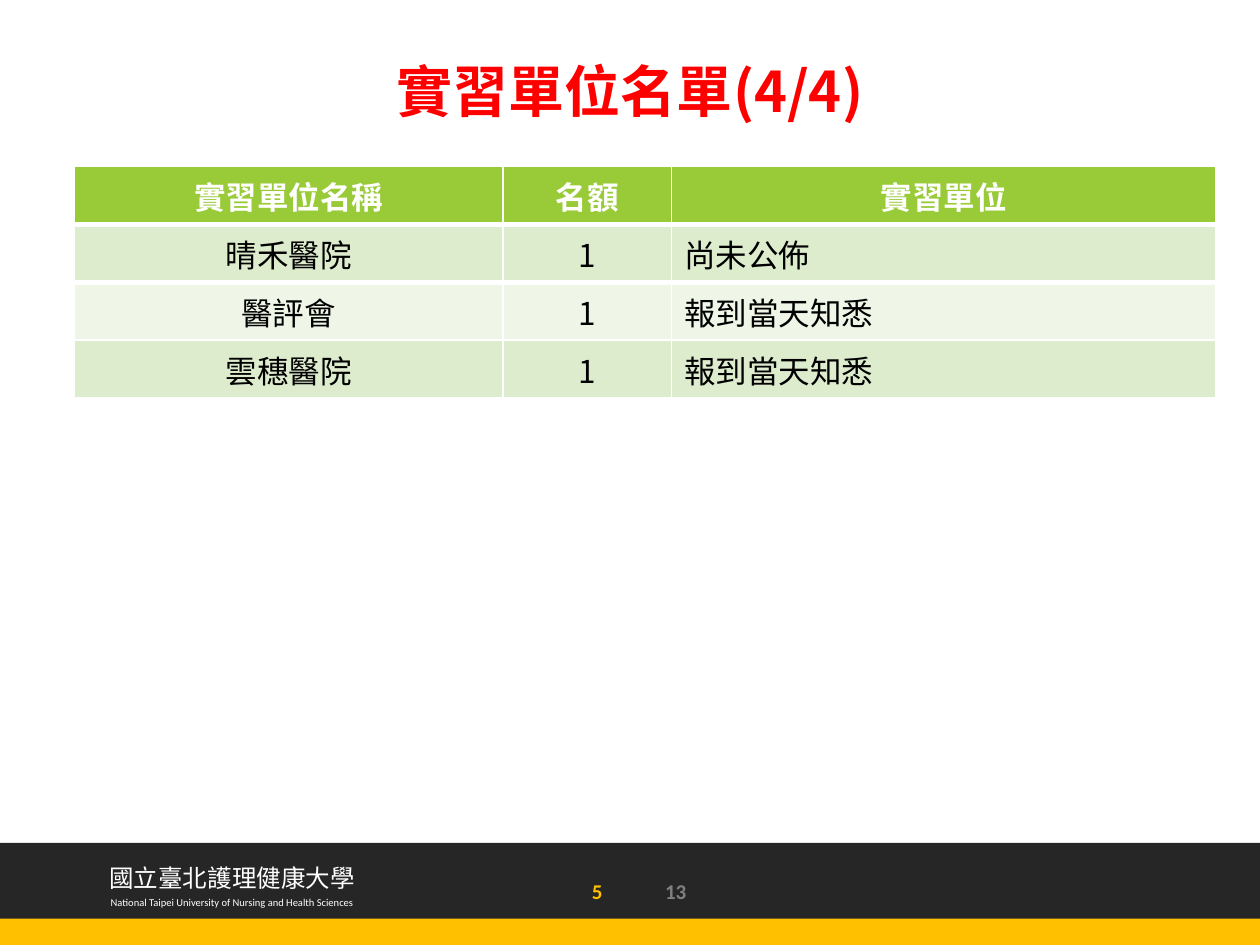
import pptx
import pptx.dml.color
import pptx.enum.shapes
import pptx.enum.text
import pptx.oxml
import pptx.oxml.ns
import pptx.util

Inches = pptx.util.Inches
CENTER = pptx.enum.text.PP_ALIGN.CENTER
LEFT = pptx.enum.text.PP_ALIGN.LEFT
MIDDLE = pptx.enum.text.MSO_ANCHOR.MIDDLE
CJK_FONT = "Noto Sans CJK SC"
NAMESPACE = pptx.oxml.ns.nsdecls("a")


def color(hex_string):
    return pptx.dml.color.RGBColor.from_string(hex_string)


def write_text(text_frame, text, hex_string, alignment, font_format):
    paragraph = text_frame.paragraphs[0]
    paragraph.alignment = alignment
    run = paragraph.add_run()
    run.text = text
    run.font.color.rgb = color(hex_string)
    for name, value in font_format.items():
        setattr(run.font, name, value)
    east_asian = pptx.oxml.parse_xml(f'<a:ea {NAMESPACE} typeface="{CJK_FONT}"/>')
    run.font._element.append(east_asian)


presentation = pptx.Presentation()
presentation.slide_width = Inches(10)
presentation.slide_height = Inches(7.5)
slide = presentation.slides.add_slide(presentation.slide_layouts[5])

for top, height, fill in [(6.69, 0.61, "262626"), (7.29, 0.21, "FFC000")]:
    band = slide.shapes.add_shape(
        pptx.enum.shapes.MSO_SHAPE.RECTANGLE,
        Inches(0), Inches(top), Inches(10), Inches(height),
    )
    band.shadow.inherit = False
    band.fill.solid()
    band.fill.fore_color.rgb = color(fill)
    band.line.fill.background()

footer_texts = [
    ("國立臺北護理健康大學", 0.77, 6.8, 2.17, 0.34, 14, CJK_FONT, "FFFFFF", False),
    ("National Taipei University of Nursing and Health Sciences",
     0.78, 7.06, 2.18, 0.2, 6, "Calibri", "FFFFFF", False),
    ("5", 4.6, 6.92, 0.4, 0.3, 12, "Calibri", "FFC000", True),
    ("13", 5.18, 6.92, 0.37, 0.3, 12, "Calibri", "808080", True),
]
for text, left, top, width, height, size, font_name, text_color, bold in footer_texts:
    text_box = slide.shapes.add_textbox(
        Inches(left), Inches(top), Inches(width), Inches(height)
    )
    text_box.text_frame.word_wrap = False
    text_box.text_frame.auto_size = pptx.enum.text.MSO_AUTO_SIZE.SHAPE_TO_FIT_TEXT
    font_format = {"size": pptx.util.Pt(size), "name": font_name, "bold": bold}
    write_text(text_box.text_frame, text, text_color, LEFT, font_format)

title = slide.shapes.title
title_position = {"left": 0.5, "top": 0.13, "width": 9, "height": 1.17}
for name, value in title_position.items():
    setattr(title, name, Inches(value))
title.text_frame.vertical_anchor = MIDDLE
title_format = {"size": pptx.util.Pt(32), "name": CJK_FONT, "bold": True}
write_text(title.text_frame, "實習單位名單(4/4)", "FF0000", CENTER, title_format)

rows = [
    ("實習單位名稱", "名額", "實習單位"),
    ("晴禾醫院", "1", "尚未公佈"),
    ("醫評會", "1", "報到當天知悉"),
    ("雲穗醫院", "1", "報到當天知悉"),
]
row_fills = ["99CB38", "DEECCE", "EFF6E8", "DEECCE"]
row_height = 0.46
column_widths = [3.4, 1.34, 4.32]
name_margins = {
    "margin_left": 0.01, "margin_right": 0.01, "margin_top": 0.01, "margin_bottom": 0,
}
header_edges = {0: "lnB", 1: "lnT"}

table = slide.shapes.add_table(
    len(rows), len(column_widths),
    Inches(0.59), Inches(1.32), Inches(sum(column_widths)), Inches(row_height * len(rows)),
).table
for column, width in zip(table.columns, column_widths):
    column.width = Inches(width)

for row_index, row_texts in enumerate(rows):
    table.rows[row_index].height = Inches(row_height)
    is_header = row_index == 0
    cell_format = {"size": pptx.util.Pt(18), "name": CJK_FONT, "bold": is_header}
    text_color = "FFFFFF" if is_header else "000000"
    for column_index, text in enumerate(row_texts):
        cell = table.cell(row_index, column_index)
        cell.fill.solid()
        cell.fill.fore_color.rgb = color(row_fills[row_index])
        cell.vertical_anchor = MIDDLE
        if column_index == 0 and not is_header:
            for name, value in name_margins.items():
                setattr(cell, name, Inches(value))
        if row_index in header_edges:
            edge = header_edges[row_index]
            border = pptx.oxml.parse_xml(
                f'<a:{edge} {NAMESPACE} w="{pptx.util.Pt(3)}"><a:solidFill>'
                f'<a:srgbClr val="FFFFFF"/></a:solidFill></a:{edge}>'
            )
            cell._tc.get_or_add_tcPr().insert(0, border)
        alignment = CENTER if is_header or column_index < 2 else LEFT
        write_text(cell.text_frame, text, text_color, alignment, cell_format)

presentation.save("out.pptx")
